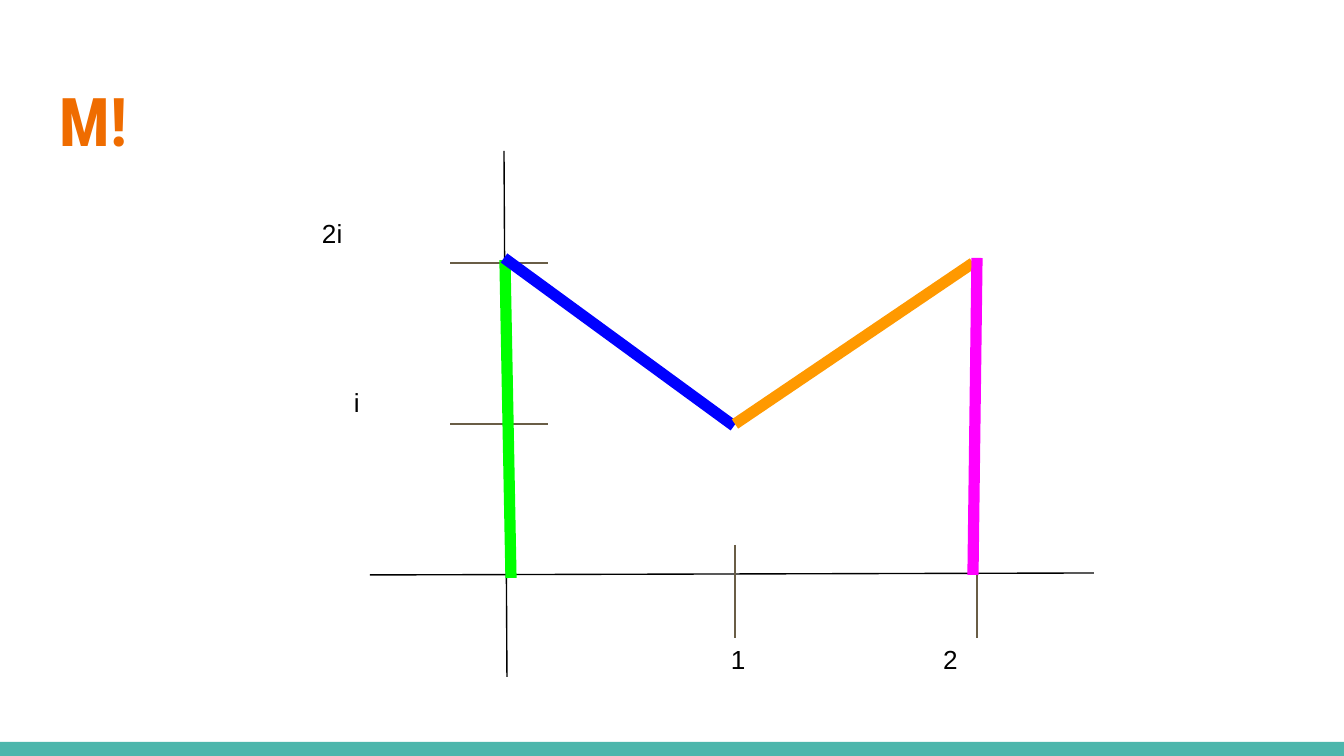
"""Builds the slide that draws a letter M on the complex plane."""
from dataclasses import dataclass

from lxml.etree import SubElement
from pptx import Presentation
from pptx.dml.color import RGBColor
from pptx.enum.shapes import MSO_CONNECTOR, MSO_SHAPE
from pptx.enum.text import MSO_ANCHOR, MSO_AUTO_SIZE, PP_ALIGN
from pptx.oxml.ns import qn
from pptx.slide import Slide
from pptx.text.text import TextFrame
from pptx.util import Emu, Pt

EMU_PER_PX = 914400 / 134.4
BLACK = RGBColor(0x00, 0x00, 0x00)
WHITE = RGBColor(0xFF, 0xFF, 0xFF)
BROWN = RGBColor(0x69, 0x5D, 0x46)
TEAL = RGBColor(0x4D, 0xB6, 0xAC)
DEEP_ORANGE = RGBColor(0xEF, 0x6C, 0x00)
GREEN = RGBColor(0x00, 0xFF, 0x00)
BLUE = RGBColor(0x00, 0x00, 0xFF)
ORANGE = RGBColor(0xFF, 0x99, 0x00)
MAGENTA = RGBColor(0xFF, 0x00, 0xFF)
THIN, THICK = 0.75, 6


@dataclass(frozen=True)
class Line:
    x1: int
    y1: int
    x2: int
    y2: int
    color: RGBColor
    width: float = THIN


@dataclass(frozen=True)
class Label:
    text: str
    x: int
    y: int
    w: int
    h: int


AXES = [Line(504, 151, 507, 677, BLACK), Line(1094, 573, 370, 575, BLACK)]
TICKS = [Line(x, 545, x, 638, BROWN) for x in (735, 977)]
TICKS += [Line(548, y, 450, y, BROWN) for y in (424, 263)]
LABELS = [
    Label("1", 718, 630, 146, 106),
    Label("2", 930, 630, 146, 94),
    Label("2i", 309, 204, 118, 106),
    Label("i", 341, 373, 82, 63),
]
STROKES = [
    Line(505, 260, 511, 578, GREEN, THICK),
    Line(504, 258, 734, 426, BLUE, THICK),
    Line(973, 263, 735, 424, ORANGE, THICK),
    Line(977, 258, 973, 575, MAGENTA, THICK),
]


def px(n: int) -> Emu:
    """Turn pixels into EMU."""
    return Emu(round(n * EMU_PER_PX))


def write(tf: TextFrame, text: str, font: str, size: int, color: RGBColor, bold: bool) -> None:
    """Write one left-aligned run at the top of a text frame."""
    tf.word_wrap = True
    tf.auto_size = MSO_AUTO_SIZE.NONE
    tf.vertical_anchor = MSO_ANCHOR.TOP
    tf.margin_left = tf.margin_right = tf.margin_top = tf.margin_bottom = px(13)
    p = tf.paragraphs[0]
    p.alignment = PP_ALIGN.LEFT
    p.line_spacing = 1.0
    p.space_before = Pt(0)
    r = p.add_run()
    r.text = text
    r.font.name, r.font.size, r.font.bold = font, Pt(size), bold
    r.font.color.rgb = color


def draw_line(s: Slide, line: Line) -> None:
    """Draw a straight line without a shadow."""
    c = s.shapes.add_connector(
        MSO_CONNECTOR.STRAIGHT, px(line.x1), px(line.y1), px(line.x2), px(line.y2)
    )
    c.line.color.rgb = line.color
    c.line.width = Pt(line.width)
    SubElement(c._element.spPr, qn("a:effectLst"))


def draw_label(s: Slide, label: Label) -> None:
    """Add an axis label."""
    sp = s.shapes.add_textbox(px(label.x), px(label.y), px(label.w), px(label.h))
    write(sp.text_frame, label.text, "Arial", 14, BLACK, False)


def draw_footer_band(s: Slide) -> None:
    """Draw the coloured band along the bottom edge."""
    sp = s.shapes.add_shape(MSO_SHAPE.RECTANGLE, px(0), px(742), px(1344), px(14))
    sp.shadow.inherit = False
    sp.fill.solid()
    sp.fill.fore_color.rgb = TEAL
    sp.line.fill.background()


def draw_title(s: Slide) -> None:
    """Place and fill the title placeholder."""
    sp = s.shapes.title
    sp.left, sp.top, sp.width, sp.height = px(46), px(66), px(1252), px(103)
    write(sp.text_frame, "M!", "Roboto Condensed", 36, DEEP_ORANGE, True)


def main() -> None:
    """Build and save the slide."""
    prs = Presentation()
    prs.slide_width, prs.slide_height = px(1344), px(756)
    s = prs.slides.add_slide(prs.slide_layouts[5])
    s.background.fill.solid()
    s.background.fill.fore_color.rgb = WHITE
    draw_footer_band(s)
    draw_title(s)
    for line in AXES + TICKS:
        draw_line(s, line)
    for label in LABELS:
        draw_label(s, label)
    for stroke in STROKES:
        draw_line(s, stroke)
    prs.save("out.pptx")


if __name__ == "__main__":
    main()
